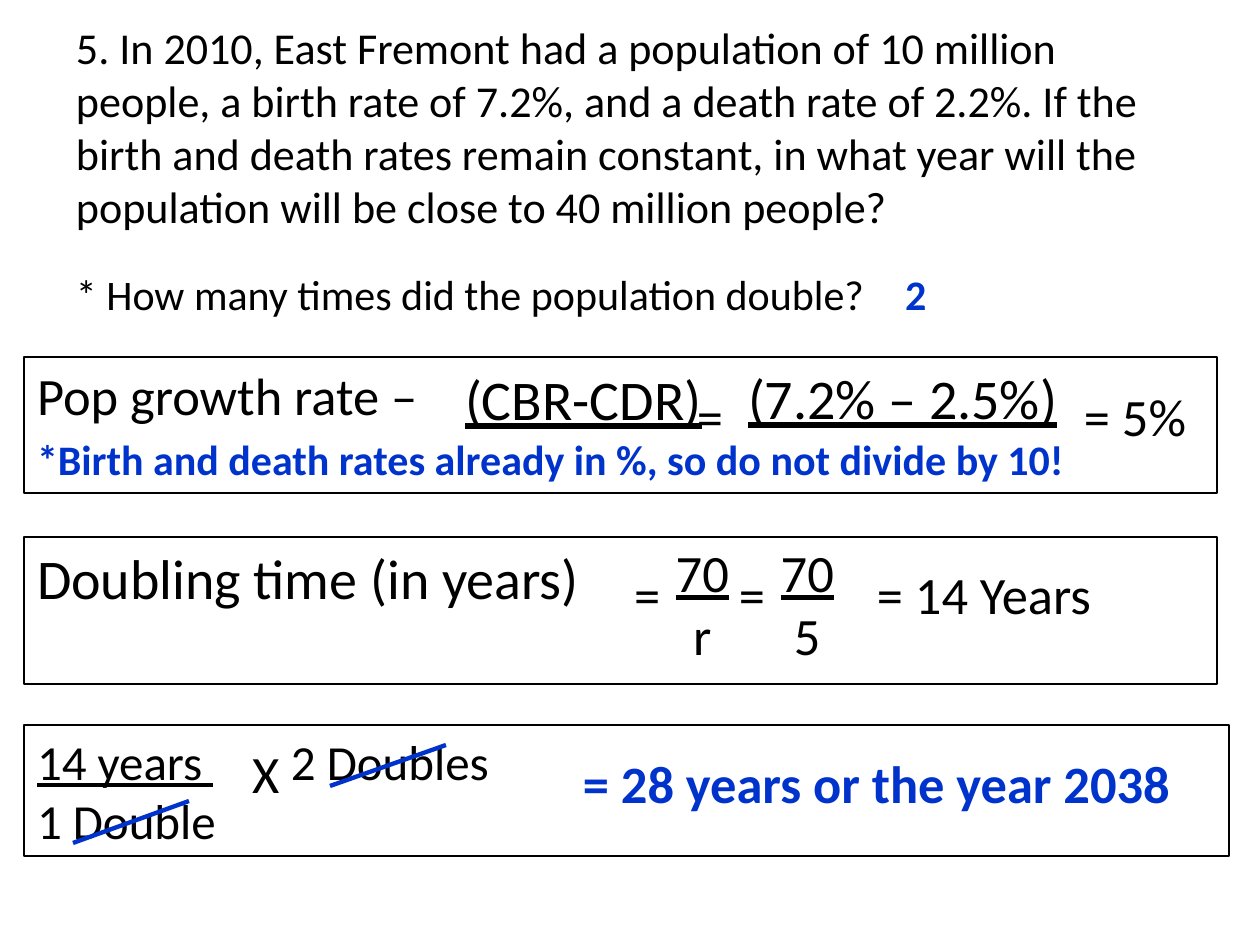
from dataclasses import dataclass

from lxml import etree
from pptx import Presentation
from pptx.dml.color import RGBColor
from pptx.enum.shapes import MSO_CONNECTOR, MSO_SHAPE
from pptx.enum.text import MSO_ANCHOR, PP_ALIGN
from pptx.oxml.ns import qn
from pptx.util import Emu, Pt

RECT = MSO_SHAPE.RECTANGLE
STRAIGHT = MSO_CONNECTOR.STRAIGHT
TOP, MIDDLE = MSO_ANCHOR.TOP, MSO_ANCHOR.MIDDLE
LEFT, CENTER = PP_ALIGN.LEFT, PP_ALIGN.CENTER

COLORS = {"ink": "000000", "answer": "0033CC"}
FONT = "Calibri"
PX_PER_INCH = 126
MARGIN = 13
FRACTION_INSET = 30


@dataclass
class Box:
    x: int
    y: int
    w: int
    h: int


@dataclass
class Label:
    text: str
    box: Box
    size: float = 30
    color: str = "ink"
    bold: bool = False
    underline: bool = False
    anchor: MSO_ANCHOR = TOP


@dataclass
class Fraction:
    top: str
    bottom: str
    box: Box


@dataclass
class Strike:
    x1: int
    y1: int
    x2: int
    y2: int


QUESTION = (
    "5. In 2010, East Fremont had a population of 10 million people, a birth rate of 7.2%, "
    "and a death rate of 2.2%. If the birth and death rates remain constant, in what year "
    "will the population will be close to 40 million people?"
)

GROWTH_FRAME = Box(24, 357, 1193, 136)
DOUBLING_FRAME = Box(24, 537, 1193, 147)
RESULT_FRAME = Box(24, 725, 1205, 131)

LABELS = [
    Label(QUESTION, Box(63, 21, 1134, 210), size=25.2, anchor=MIDDLE),
    Label("* How many times did the population double?", Box(63, 262, 1155, 63), size=24),
    Label("2", Box(892, 262, 105, 63), size=24, color="answer", bold=True),
    Label("Pop growth rate –", GROWTH_FRAME),
    Label("(CBR-CDR)", Box(452, 358, 331, 81), size=32, underline=True),
    Label("=", Box(684, 378, 53, 77)),
    Label("(7.2% – 2.5%)", Box(735, 357, 357, 81), size=32, underline=True),
    Label("= 5%", Box(1071, 378, 134, 77)),
    Label("*Birth and death rates already in %, so do not divide by 10!",
          Box(24, 427, 1155, 63), size=24, color="answer", bold=True),
    Label("Doubling time (in years)", DOUBLING_FRAME, size=32),
    Label("=", Box(621, 556, 55, 77)),
    Label("=", Box(726, 556, 53, 77)),
    Label("= 14 Years", Box(864, 556, 281, 77)),
    Label("X", Box(239, 735, 55, 77)),
    Label("= 28 years or the year 2038", Box(570, 745, 659, 77), color="answer", bold=True),
]
FRACTIONS = [
    Fraction("70", "r", Box(616, 534, 155, 140)),
    Fraction("70", "5", Box(721, 534, 155, 140)),
]
STRIKES = [Strike(330, 786, 446, 745), Strike(73, 843, 189, 801)]


def px(n: int) -> Emu:
    return Emu(round(n * 914400 / PX_PER_INCH))


def rgb(name: str) -> RGBColor:
    return RGBColor.from_string(COLORS[name])


def place(box: Box) -> list[Emu]:
    return [px(n) for n in (box.x, box.y, box.w, box.h)]


def add_run(p, text: str, *, size: float, color: str = "ink",
            bold: bool = False, underline: bool = False) -> None:
    r = p.add_run()
    r.text = text
    r.font.name = FONT
    r.font.size = Pt(size)
    r.font.color.rgb = rgb(color)
    r.font.bold = bold
    r.font.underline = underline


def add_text_frame(slide, box: Box, *, anchor: MSO_ANCHOR = TOP, inset: int = MARGIN):
    """Add an empty wrapping text box and return its text frame."""
    tf = slide.shapes.add_textbox(*place(box)).text_frame
    tf.word_wrap = True
    tf.vertical_anchor = anchor
    tf.margin_left = px(inset)
    return tf


def add_label(slide, label: Label) -> None:
    tf = add_text_frame(slide, label.box, anchor=label.anchor)
    p = tf.paragraphs[0]
    p.alignment = LEFT
    add_run(p, label.text, size=label.size, color=label.color,
            bold=label.bold, underline=label.underline)


def add_fraction(slide, fraction: Fraction) -> None:
    tf = add_text_frame(slide, fraction.box, inset=FRACTION_INSET)
    for p, text, underline in ((tf.paragraphs[0], fraction.top, True),
                               (tf.add_paragraph(), fraction.bottom, False)):
        p.alignment = CENTER
        add_run(p, text, size=30, underline=underline)


def add_frame(slide, box: Box) -> None:
    sp = slide.shapes.add_shape(RECT, *place(box))
    sp.shadow.inherit = False
    sp.fill.background()
    sp.line.color.rgb = rgb("ink")
    sp.line.width = Pt(0.75)


def add_tab_stop(p, position: int) -> None:
    tabs = etree.SubElement(p._p.get_or_add_pPr(), qn("a:tabLst"))
    etree.SubElement(tabs, qn("a:tab"), pos=str(px(position)), algn="l")


def add_unit_product(slide) -> None:
    """Write years per double, times the number of doubles."""
    tf = add_text_frame(slide, RESULT_FRAME)
    p = tf.paragraphs[0]
    add_tab_stop(p, 254)
    add_run(p, "14 years ", size=28, underline=True)
    add_run(p, "\t2 Doubles", size=28)
    add_run(tf.add_paragraph(), "1 Double", size=28)


def add_strike(slide, strike: Strike) -> None:
    line = slide.shapes.add_connector(
        STRAIGHT, px(strike.x1), px(strike.y1), px(strike.x2), px(strike.y2))
    line.line.color.rgb = rgb("answer")
    line.line.width = Pt(2.5)
    etree.SubElement(line._element.spPr, qn("a:effectLst"))


def main() -> None:
    prs = Presentation()
    prs.slide_width, prs.slide_height = px(1260), px(945)
    slide = prs.slides.add_slide(prs.slide_layouts[6])
    for frame in (GROWTH_FRAME, DOUBLING_FRAME, RESULT_FRAME):
        add_frame(slide, frame)
    for label in LABELS:
        add_label(slide, label)
    for fraction in FRACTIONS:
        add_fraction(slide, fraction)
    add_unit_product(slide)
    for strike in STRIKES:
        add_strike(slide, strike)
    prs.save("out.pptx")


if __name__ == "__main__":
    main()
